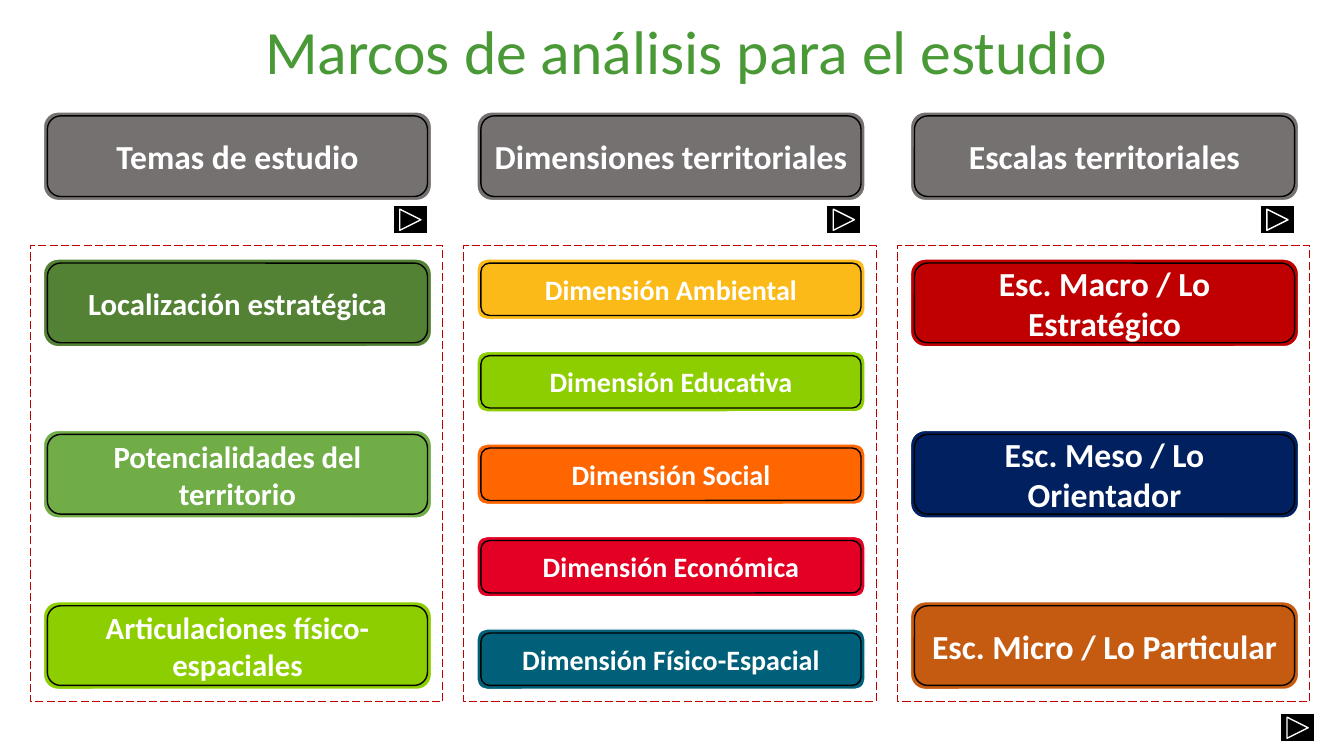
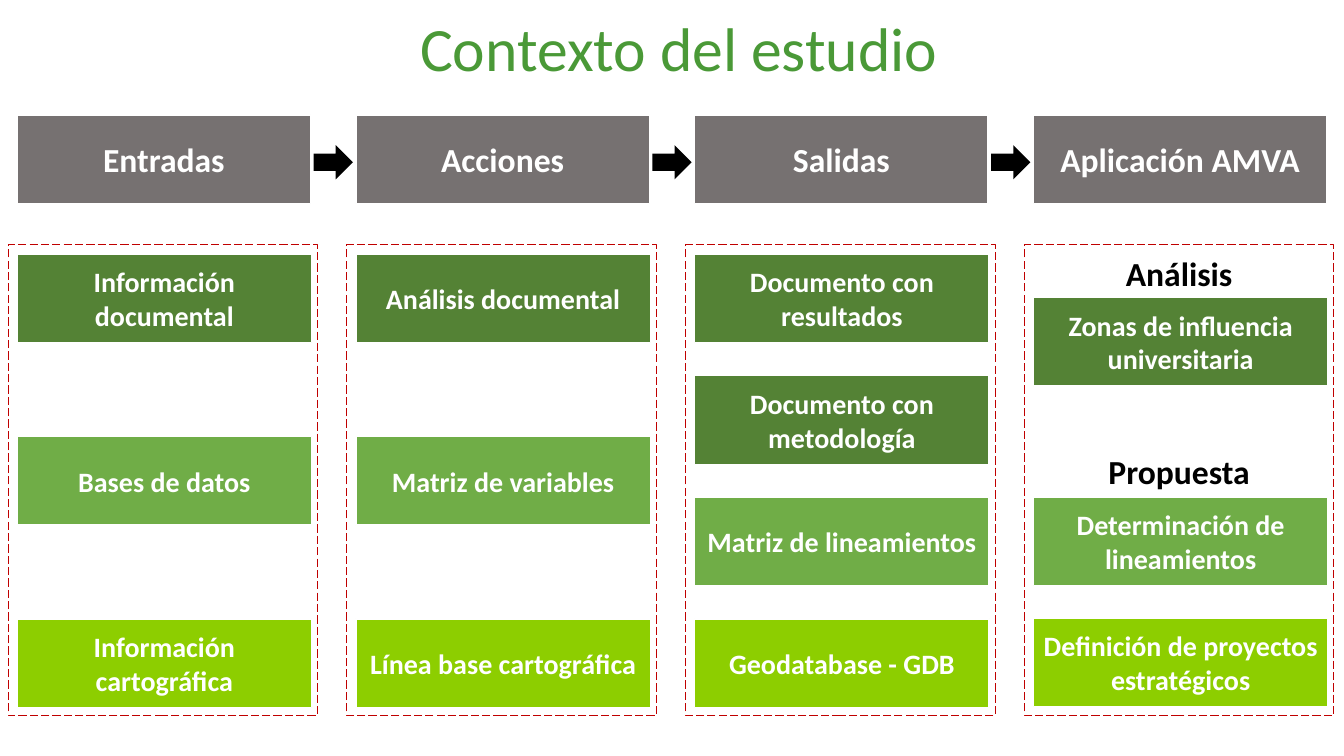
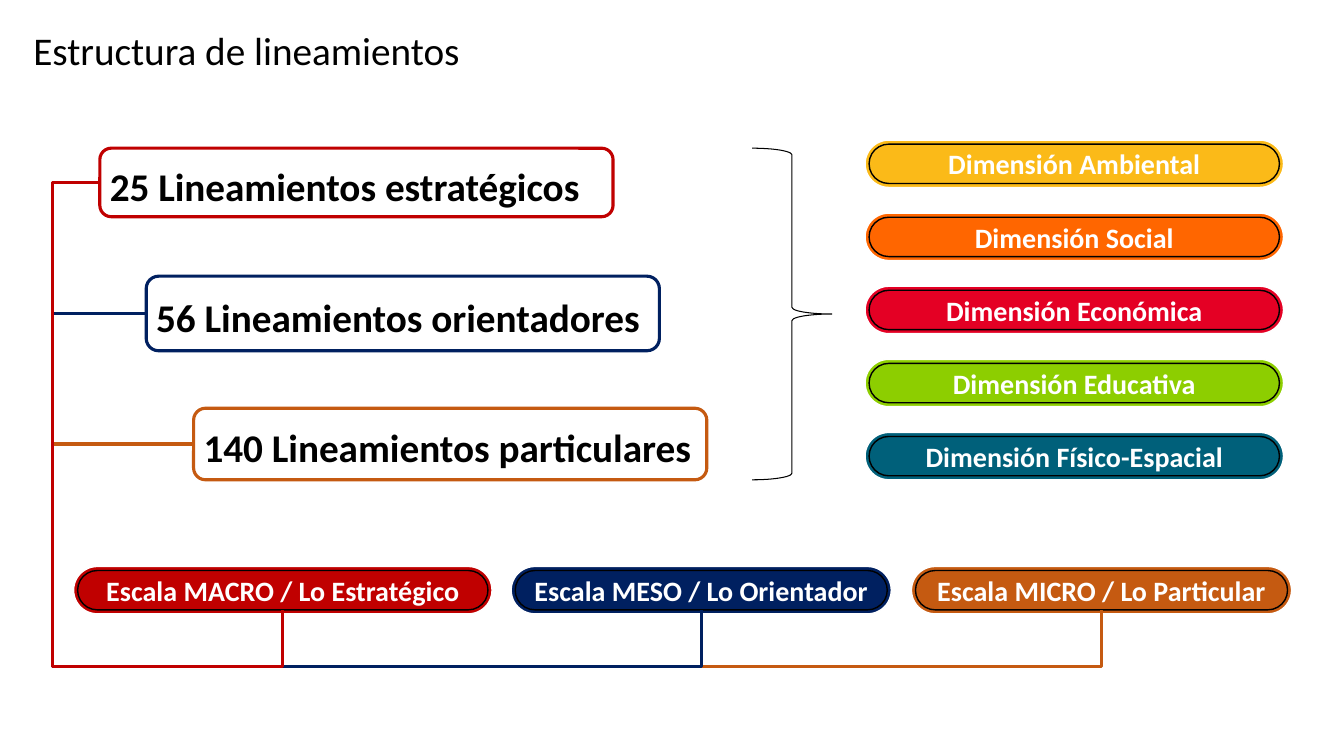
from dataclasses import dataclass
from typing import Optional

from lxml.etree import SubElement
from pptx import Presentation
from pptx.dml.color import RGBColor
from pptx.enum.dml import MSO_LINE
from pptx.enum.shapes import MSO_CONNECTOR, MSO_SHAPE
from pptx.enum.text import MSO_ANCHOR, MSO_AUTO_SIZE, PP_ALIGN
from pptx.oxml.ns import qn
from pptx.shapes.autoshape import Shape
from pptx.slide import Slide
from pptx.text.text import TextFrame
from pptx.util import Inches, Pt


@dataclass(frozen=True)
class Theme:
    """Colours, font and type sizes shared by the slides."""

    font: str = "Calibri"
    title_green: str = "4A9937"
    black: str = "000000"
    white: str = "FFFFFF"
    gray: str = "767171"
    dark_green: str = "548235"
    green: str = "70AD47"
    lime: str = "8DCE00"
    yellow: str = "FBBA18"
    orange: str = "FF6600"
    crimson: str = "E40024"
    teal: str = "00607A"
    red: str = "C00000"
    navy: str = "002060"
    brown: str = "C55A11"
    title_size: int = 44
    statement_size: int = 28
    header_size: int = 24
    topic_size: int = 22
    card_size: int = 20


THEME = Theme()


@dataclass(frozen=True)
class Box:
    """A rectangle in inches."""

    left: float
    top: float
    width: float
    height: float

    def lengths(self) -> tuple:
        """Return the four values as lengths."""
        return tuple(Inches(value) for value in (self.left, self.top, self.width, self.height))

    def inset(self, margin: float) -> "Box":
        """Return the box shrunk on every side."""
        return Box(self.left + margin, self.top + margin,
                   self.width - 2 * margin, self.height - 2 * margin)


@dataclass(frozen=True)
class Card:
    """A text and its fill colour."""

    text: str
    color: str


@dataclass(frozen=True)
class Column:
    """A header with the cards below it."""

    header: str
    cards: tuple
    size: int = THEME.card_size
    height: float = 0.88
    tops: tuple = ()


@dataclass(frozen=True)
class Guideline:
    """An outlined statement tied to its scale."""

    text: str
    color: str
    box: Box
    text_top: float
    scale: str
    scale_left: float
    scale_width: float


AMBIENTAL = Card("Dimensión Ambiental", THEME.yellow)
EDUCATIVA = Card("Dimensión Educativa", THEME.lime)
SOCIAL = Card("Dimensión Social", THEME.orange)
ECONOMICA = Card("Dimensión Económica", THEME.crimson)
ESPACIAL = Card("Dimensión Físico-Espacial", THEME.teal)

FRAMEWORKS = (
    Column("Temas de estudio", (
        Card("Localización estratégica", THEME.dark_green),
        Card("Potencialidades del territorio", THEME.green),
        Card("Articulaciones físico-espaciales", THEME.lime),
    ), THEME.topic_size, 0.87),
    Column("Dimensiones territoriales",
           (AMBIENTAL, EDUCATIVA, SOCIAL, ECONOMICA, ESPACIAL), THEME.card_size, 0.6),
    Column("Escalas territoriales", (
        Card("Esc. Macro / Lo Estratégico", THEME.red),
        Card("Esc. Meso / Lo Orientador", THEME.navy),
        Card("Esc. Micro / Lo Particular", THEME.brown),
    ), THEME.header_size, 0.87),
)

STAGES = (
    Column("Entradas", (
        Card("Información documental", THEME.dark_green),
        Card("Bases de datos", THEME.green),
        Card("Información cartográfica", THEME.lime),
    )),
    Column("Acciones", (
        Card("Análisis documental", THEME.dark_green),
        Card("Matriz de variables", THEME.green),
        Card("Línea base cartográfica", THEME.lime),
    )),
    Column("Salidas", (
        Card("Documento con resultados", THEME.dark_green),
        Card("Documento con metodología", THEME.dark_green),
        Card("Matriz de lineamientos", THEME.green),
        Card("Geodatabase - GDB", THEME.lime),
    )),
    Column("Aplicación AMVA", (
        Card("Zonas de influencia universitaria", THEME.dark_green),
        Card("Determinación de lineamientos", THEME.green),
        Card("Definición de proyectos estratégicos", THEME.lime),
    ), tops=(2.95, 4.93, 6.13)),
)

GUIDELINES = (
    Guideline("25 Lineamientos estratégicos", THEME.red, Box(0.99, 1.47, 5.09, 0.68), 1.53,
              "Escala MACRO / Lo Estratégico", 0.73, 4.15),
    Guideline("56 Lineamientos orientadores", THEME.navy, Box(1.45, 2.74, 5.09, 0.74), 2.83,
              "Escala MESO / Lo Orientador", 5.07, 3.77),
    Guideline("140 Lineamientos particulares", THEME.brown, Box(1.92, 4.05, 5.09, 0.71), 4.12,
              "Escala MICRO / Lo Particular", 9.04, 3.77),
)


def spread(first: float, last: float, count: int) -> list[float]:
    """Return evenly spaced positions from first to last."""
    return [first + (last - first) * index / (count - 1) for index in range(count)]


def write_text(frame: TextFrame, text: str, *, size: int, color: str = THEME.white,
               bold: bool = True, alignment: PP_ALIGN = PP_ALIGN.CENTER,
               anchor: MSO_ANCHOR = MSO_ANCHOR.MIDDLE, line_spacing: float = 1.0,
               indent: float = 0.1) -> None:
    """Write one formatted paragraph into a text frame."""
    frame.word_wrap = True
    frame.auto_size = MSO_AUTO_SIZE.NONE
    frame.vertical_anchor = anchor
    frame.margin_left = Inches(indent)
    paragraph = frame.paragraphs[0]
    paragraph.alignment = alignment
    paragraph.line_spacing = line_spacing
    paragraph.space_before = Pt(0)
    run = paragraph.add_run()
    run.text = text
    run.font.name = THEME.font
    run.font.size = Pt(size)
    run.font.bold = bold
    run.font.color.rgb = RGBColor.from_string(color)


def add_figure(slide: Slide, kind: MSO_SHAPE, box: Box, *, fill: Optional[str] = None,
               line: Optional[str] = None, width: float = 1,
               dash: Optional[MSO_LINE] = None) -> Shape:
    """Add a preset shape with an explicit fill and outline."""
    shape = slide.shapes.add_shape(kind, *box.lengths())
    shape.shadow.inherit = False
    if fill:
        shape.fill.solid()
        shape.fill.fore_color.rgb = RGBColor.from_string(fill)
    else:
        shape.fill.background()
    if line:
        shape.line.color.rgb = RGBColor.from_string(line)
        shape.line.width = Pt(width)
        shape.line.dash_style = dash
    else:
        shape.line.fill.background()
    return shape


def add_card(slide: Slide, kind: MSO_SHAPE, box: Box, card: Card, size: int) -> Shape:
    """Add a filled shape with centred white text."""
    shape = add_figure(slide, kind, box, fill=card.color, line=THEME.white)
    write_text(shape.text_frame, card.text, size=size)
    return shape


def add_ringed_card(slide: Slide, box: Box, card: Card, size: int,
                    pill: bool = False) -> Shape:
    """Add a rounded card with a thin inner ring and return the ring."""
    shape = add_card(slide, MSO_SHAPE.ROUNDED_RECTANGLE, box, card, size)
    ring = add_figure(slide, MSO_SHAPE.ROUNDED_RECTANGLE, box.inset(0.04), line=THEME.black)
    if pill:
        shape.adjustments[0] = ring.adjustments[0] = 0.5
    return ring


def add_frame(slide: Slide, box: Box) -> None:
    """Add the dashed frame around a column."""
    add_figure(slide, MSO_SHAPE.RECTANGLE, box, line=THEME.red, width=0.75,
               dash=MSO_LINE.LONG_DASH)


def add_label(slide: Slide, box: Box, text: str, size: int, alignment: PP_ALIGN,
              line_spacing: float = 1.0) -> None:
    """Add a bold black text box."""
    label = slide.shapes.add_textbox(*box.lengths())
    write_text(label.text_frame, text, size=size, color=THEME.black, alignment=alignment,
               anchor=MSO_ANCHOR.TOP, line_spacing=line_spacing)


def add_next_button(slide: Slide, left: float, top: float) -> None:
    """Add a forward button."""
    add_figure(slide, MSO_SHAPE.ACTION_BUTTON_FORWARD_OR_NEXT, Box(left, top, 0.34, 0.28),
               fill=THEME.black, line=THEME.white)


def add_bracket(slide: Slide, start: Shape, end: Shape, color: str) -> None:
    """Link the left of one shape to the bottom of another around a shared corner."""
    connector = slide.shapes.add_connector(MSO_CONNECTOR.ELBOW, 0, 0, 0, 0)
    connector.begin_connect(start, 1)
    connector.end_connect(end, 2)
    connector.line.color.rgb = RGBColor.from_string(color)
    connector.line.width = Pt(2.25)
    properties = connector._element.spPr
    transform = properties.find(qn("a:xfrm"))
    for name, value in (("rot", "10800000"), ("flipH", "1"), ("flipV", "1")):
        transform.set(name, value)
    geometry = properties.find(qn("a:prstGeom"))
    geometry.set("prst", "bentConnector4")
    ratios = ((Inches(0.52) - connector.left) / connector.width,
              (Inches(6.61) - connector.top) / connector.height)
    for index, ratio in enumerate(ratios, 1):
        SubElement(geometry.find(qn("a:avLst")), qn("a:gd"), name=f"adj{index}",
                   fmla=f"val {round(ratio * 100000)}")
    SubElement(properties, qn("a:effectLst"))


def add_titled_slide(presentation: Presentation, title: str, box: Box, *, indent: float,
                     size: int = THEME.title_size, color: str = THEME.title_green,
                     alignment: PP_ALIGN = PP_ALIGN.CENTER) -> Slide:
    """Add a title-only slide and format its title."""
    slide = presentation.slides.add_slide(presentation.slide_layouts[5])
    shape = slide.shapes.title
    shape.left, shape.top, shape.width, shape.height = box.lengths()
    write_text(shape.text_frame, title, size=size, color=color, bold=False,
               alignment=alignment, line_spacing=1.07, indent=indent)
    return slide


def build_frameworks(presentation: Presentation) -> None:
    """Build the slide with the three analysis frameworks."""
    slide = add_titled_slide(presentation, "Marcos de análisis para el estudio",
                             Box(0.34, 0.05, 12.66, 0.84), indent=0.38)
    for index, column in enumerate(FRAMEWORKS):
        left = 0.43 + 4.3 * index
        add_ringed_card(slide, Box(left, 1.11, 3.85, 0.88),
                        Card(column.header, THEME.gray), THEME.header_size)
        tops = spread(2.57, 6.84 - column.height, len(column.cards))
        for top, card in zip(tops, column.cards):
            add_ringed_card(slide, Box(left, top, 3.85, column.height), card, column.size)
        add_frame(slide, Box(left - 0.13, 2.44, 4.09, 4.52))
        add_next_button(slide, left + 3.47, 2.04)
    add_next_button(slide, 12.7, 7.08)


def build_context(presentation: Presentation) -> None:
    """Build the slide with the four stages of the study."""
    slide = add_titled_slide(presentation, "Contexto del estudio",
                             Box(0, 0.07, 13.33, 0.74), indent=0.24)
    for index, column in enumerate(STAGES):
        left = 0.17 + 3.36 * index
        add_card(slide, MSO_SHAPE.RECTANGLE, Box(left, 1.14, 2.91, 0.88),
                 Card(column.header, THEME.gray), THEME.header_size)
        tops = column.tops or spread(2.52, 6.14, len(column.cards))
        for top, card in zip(tops, column.cards):
            add_card(slide, MSO_SHAPE.RECTANGLE, Box(left, top, 2.92, column.height),
                     card, column.size)
        add_frame(slide, Box(left - 0.09, 2.43, 3.07, 4.67))
        if index < len(STAGES) - 1:
            add_figure(slide, MSO_SHAPE.RIGHT_ARROW, Box(left + 2.94, 1.44, 0.39, 0.34),
                       fill=THEME.black)
    for text, top in (("Análisis", 2.46), ("Propuesta", 4.42)):
        add_label(slide, Box(10.5, top, 2.39, 0.5), text, THEME.header_size, PP_ALIGN.CENTER)


def build_guidelines(presentation: Presentation) -> None:
    """Build the slide with the structure of the guidelines."""
    slide = add_titled_slide(presentation, "Estructura de lineamientos",
                             Box(0, 0.19, 13.33, 0.57), indent=0.33,
                             size=THEME.statement_size, color=THEME.black,
                             alignment=PP_ALIGN.JUSTIFY)
    dimensions = (AMBIENTAL, SOCIAL, ECONOMICA, EDUCATIVA, ESPACIAL)
    for top, card in zip(spread(1.39, 4.29, len(dimensions)), dimensions):
        add_ringed_card(slide, Box(8.58, top, 4.15, 0.47), card, THEME.card_size, pill=True)
    add_figure(slide, MSO_SHAPE.RIGHT_BRACE, Box(7.46, 1.47, 0.79, 3.29),
               line=THEME.black, width=0.75)
    for guideline in reversed(GUIDELINES):
        box = guideline.box
        add_label(slide, Box(box.left, guideline.text_top, box.width, 0.58), guideline.text,
                  THEME.statement_size, PP_ALIGN.JUSTIFY, 1.07)
        outline = add_figure(slide, MSO_SHAPE.ROUNDED_RECTANGLE, box,
                             line=guideline.color, width=2.25)
        ring = add_ringed_card(
            slide, Box(guideline.scale_left, 5.62, guideline.scale_width, 0.47),
            Card(guideline.scale, guideline.color), THEME.card_size, pill=True)
        add_bracket(slide, outline, ring, guideline.color)


def main() -> None:
    """Build and save the presentation."""
    presentation = Presentation()
    presentation.slide_width = Inches(13.33)
    presentation.slide_height = Inches(7.5)
    build_frameworks(presentation)
    build_context(presentation)
    build_guidelines(presentation)
    presentation.save("out.pptx")


if __name__ == "__main__":
    main()
